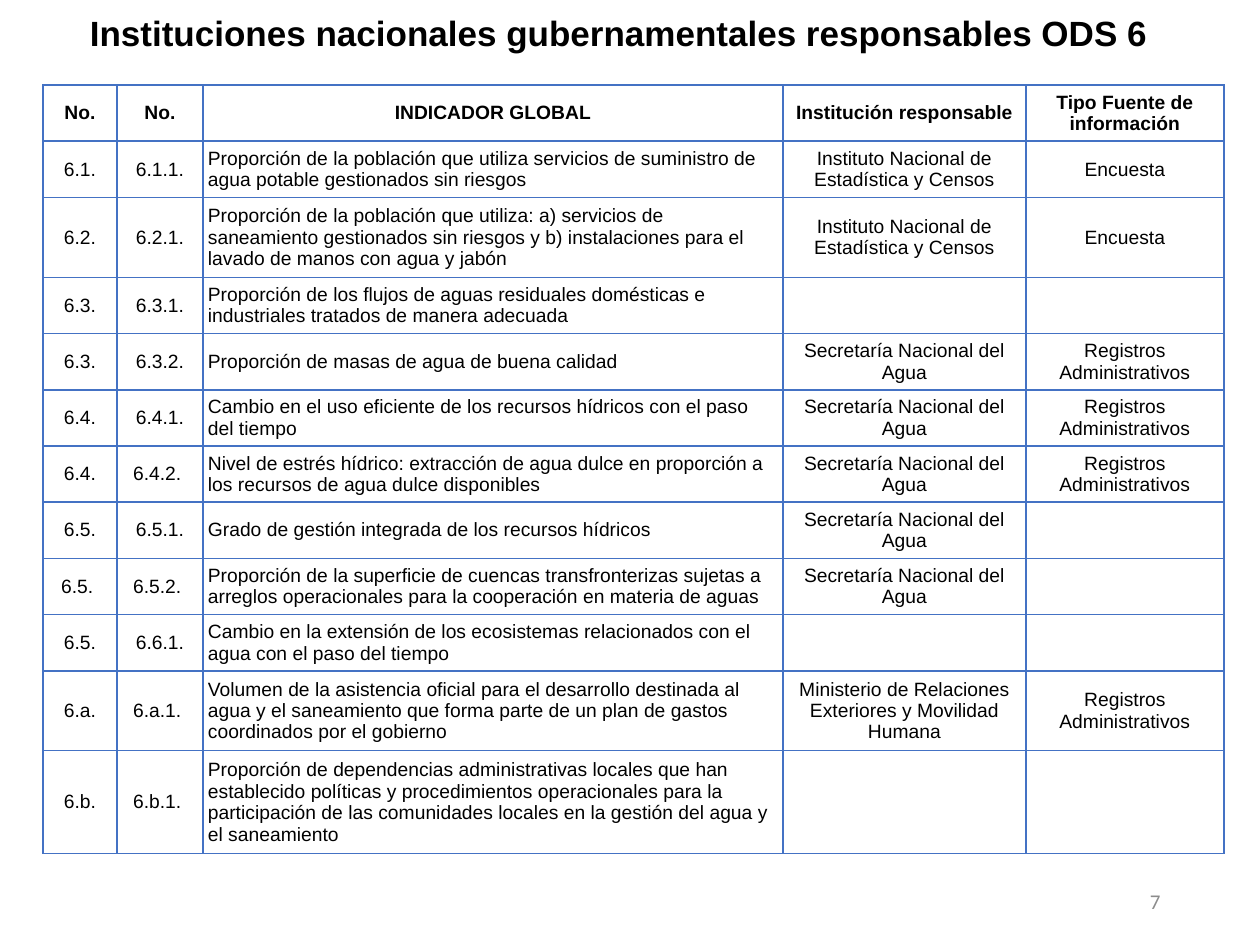
from lxml import etree
from pptx import Presentation
from pptx import util as u
from pptx.dml import color
from pptx.enum import text
from pptx.oxml import ns

DPI = 126
MID = text.MSO_ANCHOR.MIDDLE
TOP = text.MSO_ANCHOR.TOP
LEFT, CENTER, RIGHT = text.PP_ALIGN.LEFT, text.PP_ALIGN.CENTER, text.PP_ALIGN.RIGHT

INEC = "Instituto Nacional de Estadística y Censos"
AGUA = "Secretaría Nacional del Agua"
POLL = "Encuesta"
REGS = "Registros Administrativos"

HEAD = ("No.", "No.", "INDICADOR GLOBAL", "Institución responsable", "Tipo Fuente de información")
ROWS = [
    ("6.1.", "6.1.1.", "Proporción de la población que utiliza servicios de suministro de agua potable gestionados sin riesgos", INEC, POLL),
    ("6.2.", "6.2.1.", "Proporción de la población que utiliza: a) servicios de saneamiento gestionados sin riesgos y b) instalaciones para el lavado de manos con agua y jabón", INEC, POLL),
    ("6.3.", "6.3.1.", "Proporción de los flujos de aguas residuales domésticas e industriales tratados de manera adecuada", "", ""),
    ("6.3.", "6.3.2.", "Proporción de masas de agua de buena calidad", AGUA, REGS),
    ("6.4.", "6.4.1.", "Cambio en el uso eficiente de los recursos hídricos con el paso del tiempo", AGUA, REGS),
    ("6.4.", "6.4.2. ", "Nivel de estrés hídrico: extracción de agua dulce en proporción a los recursos de agua dulce disponibles", AGUA, REGS),
    ("6.5.", "6.5.1.", "Grado de gestión integrada de los recursos hídricos", AGUA, ""),
    ("6.5. ", "6.5.2. ", "Proporción de la superficie de cuencas transfronterizas sujetas a arreglos operacionales para la cooperación en materia de aguas", AGUA, ""),
    ("6.5.", "6.6.1.", "Cambio en la extensión de los ecosistemas relacionados con el agua con el paso del tiempo", "", ""),
    ("6.a.", "6.a.1. ", "Volumen de la asistencia oficial para el desarrollo destinada al agua y el saneamiento que forma parte de un plan de gastos coordinados por el gobierno", "Ministerio de Relaciones Exteriores y Movilidad Humana", REGS),
    ("6.b.", "6.b.1. ", "Proporción de dependencias administrativas locales que han establecido políticas y procedimientos operacionales para la participación de las comunidades locales en la gestión del agua y el saneamiento", "", ""),
]
COLS = (74, 86, 580, 243, 198)
HIGHS = [56] * 2 + [80] + [56] * 7 + [80, 103]


def px(n):
    return u.Inches(n / DPI)


def rgb(code):
    return color.RGBColor.from_string(code)


class Deck:
    font = "Arial"
    ink = "000000"
    rule = "4472C4"
    pad = 5

    def __init__(self, wide, high):
        self.prs = Presentation()
        self.prs.slide_width, self.prs.slide_height = px(wide), px(high)
        self.slide = self.prs.slides.add_slide(self.prs.slide_layouts[5])

    def put(self, frame, words, size, align, bold=False, font=None, ink=None):
        para = frame.paragraphs[0]
        para.alignment = align
        run = para.add_run()
        run.text = words
        run.font.size = u.Pt(size)
        run.font.bold = bold
        run.font.name = font or self.font
        run.font.color.rgb = rgb(ink or self.ink)

    def title(self, words, x, y, w, h):
        shape = self.slide.shapes.title
        shape.left, shape.top, shape.width, shape.height = map(px, (x, y, w, h))
        frame = shape.text_frame
        frame.word_wrap = False
        frame.auto_size = text.MSO_AUTO_SIZE.SHAPE_TO_FIT_TEXT
        frame.vertical_anchor = TOP
        self.put(frame, words, 20, CENTER, bold=True)

    def number(self, words, x, y, w, h):
        frame = self.slide.shapes.add_textbox(*map(px, (x, y, w, h))).text_frame
        frame.word_wrap = True
        frame.vertical_anchor = MID
        self.put(frame, words, 12, RIGHT, font="Calibri", ink="8C8C8C")

    def edge(self, cell):
        props = cell._tc.get_or_add_tcPr()
        for side in ("a:lnL", "a:lnR", "a:lnT", "a:lnB"):
            line = etree.SubElement(props, ns.qn(side), w=str(u.Pt(1)))
            fill = etree.SubElement(line, ns.qn("a:solidFill"))
            etree.SubElement(fill, ns.qn("a:srgbClr"), val=self.rule)

    def cell(self, cell, words, align, bold):
        self.edge(cell)
        cell.fill.background()
        cell.vertical_anchor = MID
        cell.margin_left = cell.margin_right = px(self.pad)
        cell.margin_top = cell.margin_bottom = px(self.pad)
        if words:
            self.put(cell.text_frame, words, 11, align, bold)

    def table(self, rows, cols, highs, x, y):
        size = map(px, (x, y, sum(cols), sum(highs)))
        grid = self.slide.shapes.add_table(len(rows), len(cols), *size).table
        grid.first_row = grid.horz_banding = False
        for col, wide in zip(grid.columns, cols):
            col.width = px(wide)
        for r, (row, high) in enumerate(zip(rows, highs)):
            grid.rows[r].height = px(high)
            for c, words in enumerate(row):
                align = LEFT if r and c == 2 else CENTER
                self.cell(grid.cell(r, c), words, align, bold=r == 0)

    def save(self):
        self.prs.save("out.pptx")


def main():
    deck = Deck(1260, 945)
    deck.title("Instituciones nacionales gubernamentales responsables ODS 6", 76, 5, 1086, 55)
    deck.number("7", 890, 876, 283, 50)
    deck.table([HEAD, *ROWS], COLS, HIGHS, 43, 85)
    deck.save()


if __name__ == "__main__":
    main()
